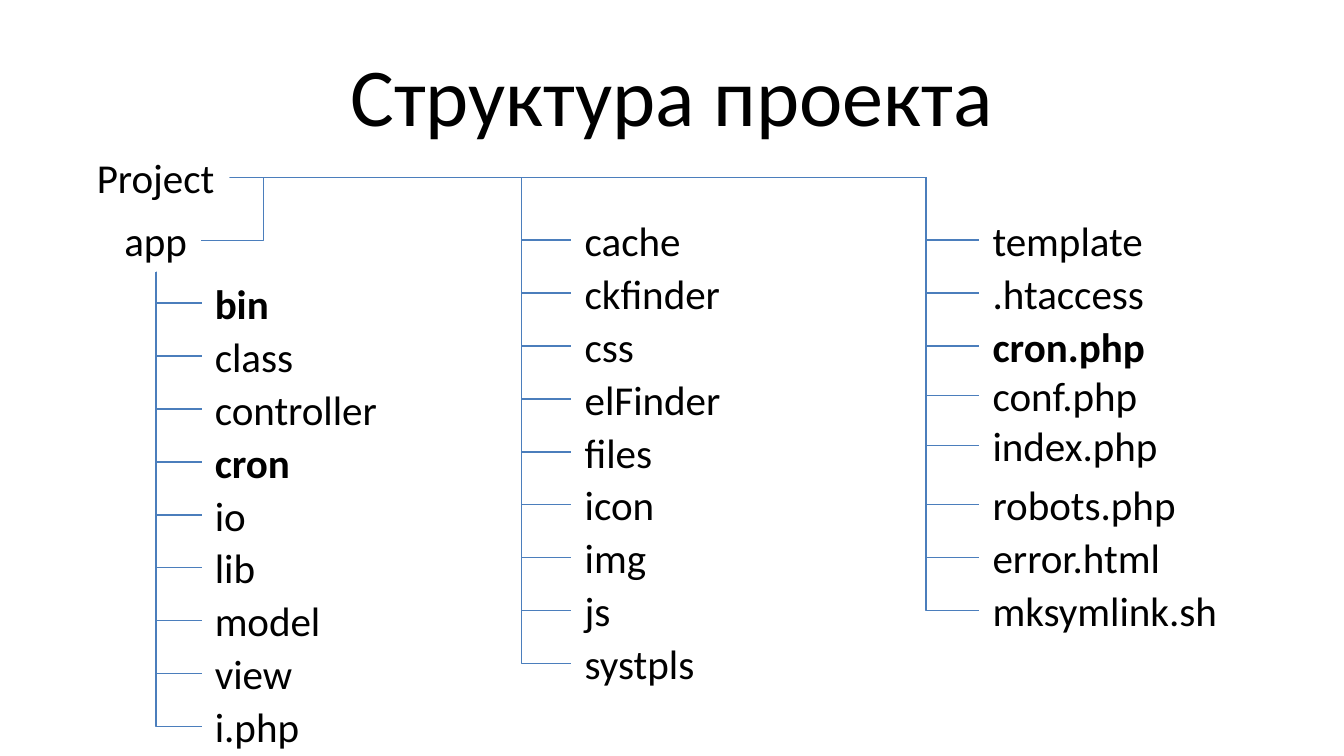
from lxml.etree import SubElement
from pptx import Presentation
from pptx.dml.color import RGBColor
from pptx.enum.shapes import MSO_CONNECTOR
from pptx.enum.text import MSO_ANCHOR, MSO_AUTO_SIZE, PP_ALIGN
from pptx.oxml.ns import qn
from pptx.util import Cm, Pt

BLACK = RGBColor(0x00, 0x00, 0x00)
BLUE = RGBColor(0x4B, 0x7E, 0xBC)
HIGH = 1.19
STEP = 1

deck = Presentation()
deck.slide_width, deck.slide_height = Cm(25.4), Cm(14.28)
slide = deck.slides.add_slide(deck.slide_layouts[6])


def write(text, x, y, wide, high=HIGH, size=22, bold=False, frame=None):
    box = slide.shapes.add_textbox(Cm(x), Cm(y), Cm(wide), Cm(high))
    body = box.text_frame
    body.text = text
    style = {"name": "Calibri", "size": Pt(size), "bold": bold}
    look = frame or {"word_wrap": False, "auto_size": MSO_AUTO_SIZE.SHAPE_TO_FIT_TEXT}
    font = body.paragraphs[0].runs[0].font
    font.color.rgb = BLACK
    for item, values in ((font, style), (body, look)):
        for key, value in values.items():
            setattr(item, key, value)
    return body


def link(start, end, bend):
    line = slide.shapes.add_connector(
        MSO_CONNECTOR.ELBOW, *(Cm(n) for n in start + end))
    line.line.color.rgb = BLUE
    line.line.width = Pt(0.75)
    props = line._element.spPr
    SubElement(props, qn("a:effectLst"))
    guides = props.find(qn("a:prstGeom")).get_or_add_avLst()
    ratio = round((bend - start[0]) / (end[0] - start[0]) * 100000)
    SubElement(guides, qn("a:gd"), name="adj1", fmla=f"val {ratio}")


title = write("Структура проекта", 1.27, 0.58, 22.86, 2.39, 44,
              frame={"word_wrap": True, "vertical_anchor": MSO_ANCHOR.MIDDLE})
title.paragraphs[0].alignment = PP_ALIGN.CENTER

root = (4.34, 3.35)
stem = (2.95, 5.13)
write("Project", 1.58, 2.75, 2.77)
write("app", 2.1, 3.94, 1.7)
link(root, (3.81, 4.54), 4.98)

groups = [
    (3.81, 5.13, stem, 2.95, [
        ("bin", 1.55), ("class", 2.01), ("controller", 3.61),
        ("cron", 1.96), ("io", 1.12), ("lib", 1.27),
        ("model", 2.54), ("view", 1.98), ("i.php", 2.11)]),
    (10.8, 3.94, root, 9.86, [
        ("cache", 2.34), ("ckfinder", 3.1), ("css", 1.45),
        ("elFinder", 3.1), ("files", 1.8), ("icon", 1.83),
        ("img", 1.68), ("js", 1.02), ("systpls", 2.62)]),
    (18.51, 3.94, root, 17.5, [
        ("template", 3.38), (".htaccess", 3.4), ("cron.php", 3.43),
        ("conf.php", 3.28), ("index.php", 3.66), ("robots.php", 4.01),
        ("error.html", 3.71), ("mksymlink.sh", 4.8)]),
]
strong = {"bin", "cron", "cron.php"}
nudge = {"conf.php": -0.06, "index.php": -0.12}

for left, top, start, bend, names in groups:
    for row, (name, wide) in enumerate(names):
        y = top + row * STEP + nudge.get(name, 0)
        write(name, left, y, wide, bold=name in strong)
        link(start, (left, y + HIGH / 2), bend)

deck.save("out.pptx")
